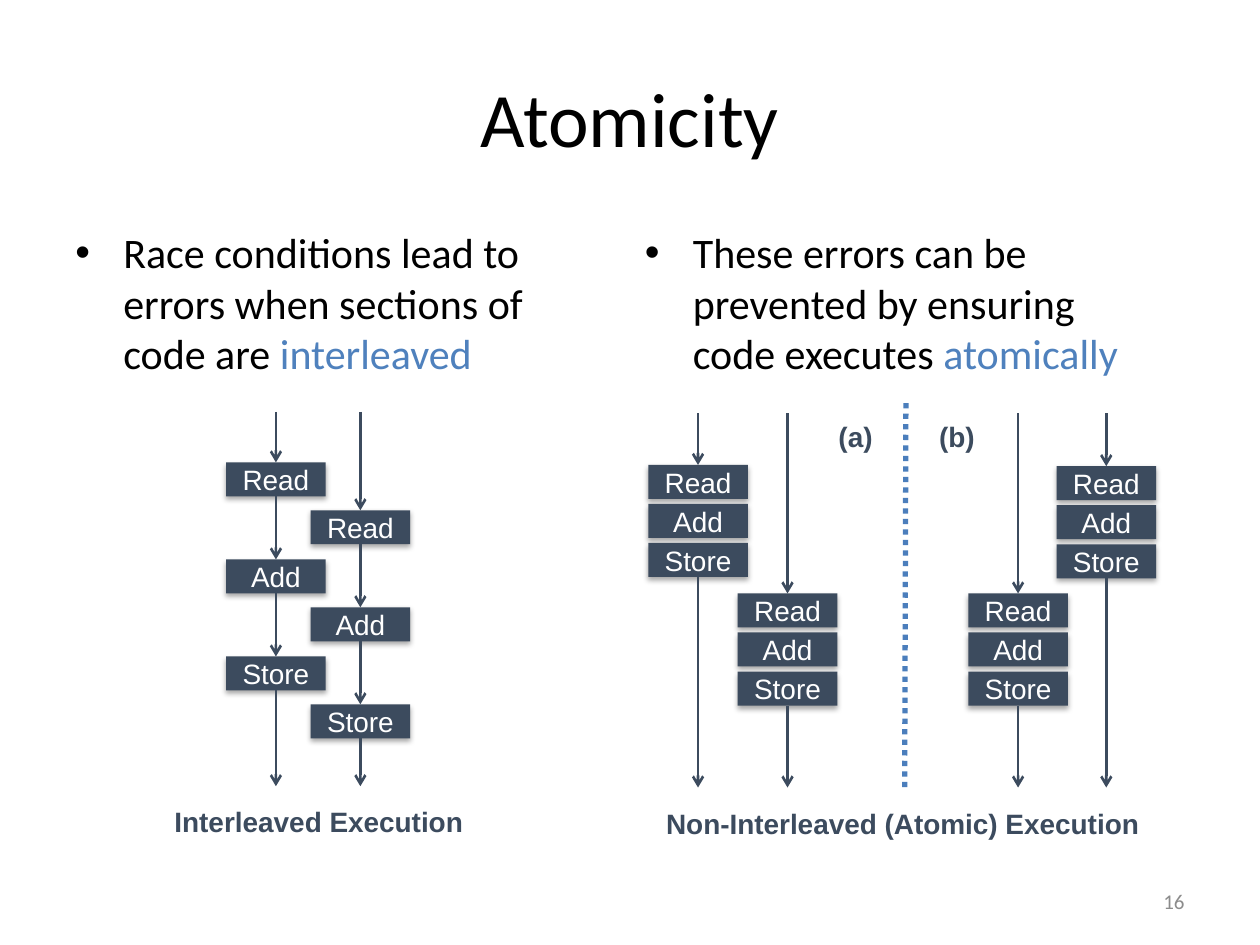
from dataclasses import dataclass
from lxml import etree
from pptx import Presentation, util as u
from pptx.dml.color import RGBColor
from pptx.enum import dml, shapes, text
from pptx.oxml.ns import qn

In, Pt = u.Inches, u.Pt
AL, ANC = text.PP_ALIGN, text.MSO_ANCHOR


@dataclass(frozen=True)
class Theme:
    ink: str = "000000"
    navy: str = "3C4B5E"
    blue: str = "4F81BD"
    rule: str = "4B7EBC"
    gray: str = "8C8C8C"
    white: str = "FFFFFF"
    head: int = 44
    body: int = 24
    label: int = 16
    foot: int = 12
    serif: str = "Calibri"
    sans: str = "Arial"


def apply(obj, vals):
    for key, val in vals.items():
        setattr(obj, key, val)


def node(root, tag, **vals):
    return etree.SubElement(root, qn(tag), {k: str(v) for k, v in vals.items()})


class Deck:
    WIDE, HIGH = 0.79, 0.27
    STEPS = ("Read", "Add", "Store")

    def __init__(self, slide, theme):
        self.slide = slide
        self.theme = theme

    def put(self, shape, runs, size, font, bold=False, frame=None, para=None):
        tf = shape.text_frame
        apply(tf, {"word_wrap": True, **(frame or {})})
        par = tf.paragraphs[0]
        apply(par, para or {})
        for words, color in runs:
            run = par.add_run()
            run.text = words
            apply(run.font, {"size": Pt(size), "name": font, "bold": bold})
            run.font.color.rgb = RGBColor.from_string(color)
        return par

    def text(self, at, *rest, **opts):
        box = self.slide.shapes.add_textbox(*map(In, at))
        return self.put(box, *rest, **opts)

    def label(self, at, words):
        t = self.theme
        self.text(at, [(words, t.navy)], t.label, t.sans, bold=True,
                  frame={"word_wrap": False,
                         "auto_size": text.MSO_AUTO_SIZE.SHAPE_TO_FIT_TEXT},
                  para={"alignment": AL.CENTER})

    def bullet(self, left, words, term):
        t = self.theme
        par = self.text((left, 1.75, 4.31, 1.52), [(words, t.ink), (term, t.blue)],
                        t.body, t.serif, para={"space_before": Pt(4.8)})
        prop = par._p.get_or_add_pPr()
        for key, val in {"marL": In(0.38), "indent": In(-0.38)}.items():
            prop.set(key, str(val))
        node(prop, "a:buFont", typeface=t.sans)
        node(prop, "a:buChar", char="•")

    def line(self, home, start, end, color, width, dash=None, arrow=False):
        ends = map(In, (*start, *end))
        link = home.add_connector(shapes.MSO_CONNECTOR.STRAIGHT, *ends)
        apply(link.line, {"width": Pt(width), "dash_style": dash})
        link.line.color.rgb = RGBColor.from_string(color)
        if arrow:
            node(link.line._get_or_add_ln(), "a:tailEnd", type="arrow")
        node(link._element.spPr, "a:effectLst")

    def box(self, home, mid, top, words):
        t = self.theme
        at = (mid - self.WIDE / 2, top, self.WIDE, self.HIGH)
        box = home.add_shape(shapes.MSO_SHAPE.RECTANGLE, *map(In, at))
        box.fill.solid()
        box.fill.fore_color.rgb = RGBColor.from_string(t.navy)
        box.line.fill.background()
        glow = node(node(box._element.spPr, "a:effectLst"), "a:outerShdw",
                    blurRad=Pt(3.1), dist=Pt(1.8), dir=5400000, rotWithShape=0)
        node(node(glow, "a:srgbClr", val=t.ink), "a:alpha", val=35000)
        sides = ("left", "right", "top", "bottom")
        self.put(box, [(words, t.white)], t.label, t.sans,
                 frame={"vertical_anchor": ANC.MIDDLE,
                        **{f"margin_{s}": 0 for s in sides}},
                 para={"alignment": AL.CENTER})

    def thread(self, home, mid, start, top, pitch, end):
        last = start
        tops = [top + i * pitch for i in range(len(self.STEPS))]
        for y, words in zip(tops, self.STEPS):
            if y - last > 0.1:
                self.arrow(home, mid, last, y)
            self.box(home, mid, y, words)
            last = y + self.HIGH
        self.arrow(home, mid, last, end)

    def arrow(self, home, mid, top, end):
        self.line(home, (mid, top), (mid, end), self.theme.navy, 1.5, arrow=True)

    def group(self):
        return self.slide.shapes.add_group_shape().shapes


def main():
    prs = Presentation()
    apply(prs, {"slide_width": In(10), "slide_height": In(7.5)})
    t = Theme()
    deck = Deck(prs.slides.add_slide(prs.slide_layouts[6]), t)

    mid = {"vertical_anchor": ANC.MIDDLE}
    deck.text((0.5, 0.3, 9, 1.25), [("Atomicity", t.ink)], t.head, t.serif,
              frame=mid, para={"alignment": AL.CENTER})
    deck.text((7.17, 6.95, 2.33, 0.4), [("16", t.gray)], t.foot, t.serif,
              frame=mid, para={"alignment": AL.RIGHT})

    deck.bullet(0.5, "Race conditions lead to errors when sections of code are ",
                "interleaved")
    deck.label((1.27, 6.34, 2.52, 0.37), "Interleaved Execution")
    pair = deck.group()
    for x, top in ((2.19, 3.67), (2.86, 4.05)):
        deck.thread(pair, x, 3.27, top, 0.77, 6.24)

    deck.bullet(5.02, "These errors can be prevented by ensuring code executes ",
                "atomically")
    deck.label((5.16, 6.35, 4.01, 0.37), "Non-Interleaved (Atomic) Execution")
    for x, top in ((5.54, 3.69), (8.78, 3.7), (8.08, 4.71), (6.25, 4.71)):
        deck.thread(deck.group(), x, 3.28, top, 0.31, 6.25)

    deck.line(deck.slide.shapes, (7.19, 3.2), (7.18, 6.25), t.rule, 3,
              dash=dml.MSO_LINE.ROUND_DOT)
    deck.label((6.55, 3.28, 0.48, 0.37), "(a)")
    deck.label((7.35, 3.28, 0.49, 0.37), "(b)")
    prs.save("out.pptx")


if __name__ == "__main__":
    main()
